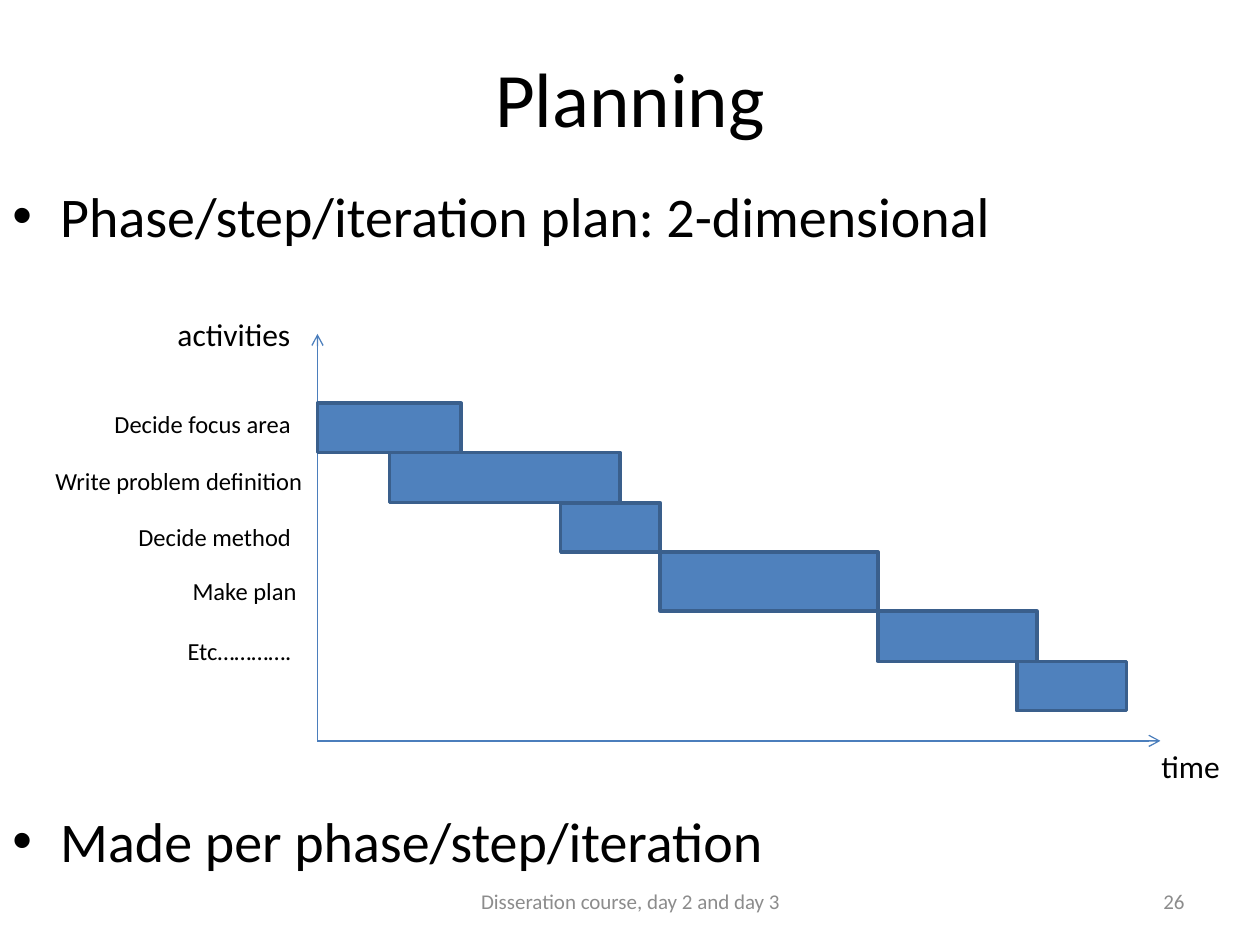
from collections import namedtuple
from dataclasses import dataclass

from lxml import etree
from pptx import Presentation
from pptx.dml.color import RGBColor
from pptx.enum.shapes import MSO_CONNECTOR, MSO_SHAPE
from pptx.enum.text import MSO_ANCHOR, PP_ALIGN
from pptx.oxml.ns import qn
from pptx.util import Inches, Pt

LEFT, CENTER, RIGHT = PP_ALIGN.LEFT, PP_ALIGN.CENTER, PP_ALIGN.RIGHT
TOP, MIDDLE = MSO_ANCHOR.TOP, MSO_ANCHOR.MIDDLE
RECTANGLE, STRAIGHT = MSO_SHAPE.RECTANGLE, MSO_CONNECTOR.STRAIGHT

Box = namedtuple("Box", "left top width height")


@dataclass(frozen=True)
class Theme:
    font: str = "Calibri"
    ink: RGBColor = RGBColor(0x00, 0x00, 0x00)
    muted: RGBColor = RGBColor(0x8C, 0x8C, 0x8C)
    axis: RGBColor = RGBColor(0x4B, 0x7E, 0xBC)
    bar: RGBColor = RGBColor(0x4F, 0x81, 0xBD)
    bar_edge: RGBColor = RGBColor(0x3A, 0x5F, 0x8C)
    title_size: int = 44
    body_size: int = 32
    axis_size: int = 18
    label_size: int = 14
    footer_size: int = 12


THEME = Theme()

POINTS = ["Phase/step/iteration plan: 2-dimensional", "Made per phase/step/iteration"]
POINT_GAP = 319

ACTIVITIES = [
    ("Decide focus area", 0.47, 0.75, 1.61),
    ("Write problem definition", 0, 1.2, 2.18),
    ("Decide method", 0.66, 1.64, 1.42),
    ("Make plan", 1.09, 2.07, 1.04),
    ("Etc………….", 1.05, 2.55, 1.03),
]
BARS = [
    (0, 1.14, 0.39),
    (0.57, 1.83, 0.4),
    (1.93, 0.79, 0.39),
    (2.72, 1.73, 0.47),
    (4.45, 1.26, 0.4),
    (5.55, 0.87, 0.39),
]


def add_text(slide, box, paragraphs, size, color=THEME.ink, align=LEFT, anchor=TOP, wrap=True):
    frame = slide.shapes.add_textbox(*map(Inches, box)).text_frame
    frame.word_wrap = wrap
    frame.vertical_anchor = anchor
    for index, text in enumerate(paragraphs):
        paragraph = frame.add_paragraph() if index else frame.paragraphs[0]
        paragraph.alignment = align
        run = paragraph.add_run()
        run.text = text
        run.font.name = THEME.font
        run.font.size = Pt(size)
        run.font.color.rgb = color
    return frame


def add_title(slide, box):
    add_text(slide, box, ["Planning"], THEME.title_size, align=CENTER, anchor=MIDDLE)


def add_points(slide, box):
    frame = add_text(slide, box, POINTS, THEME.body_size)
    for index, point in enumerate(frame.paragraphs):
        point.space_before = Pt(POINT_GAP if index else 0)
        properties = point._p.get_or_add_pPr()
        properties.set("marL", str(Inches(0.38)))
        properties.set("indent", str(Inches(-0.38)))
        etree.SubElement(properties, qn("a:buFont")).set("typeface", "Arial")
        etree.SubElement(properties, qn("a:buChar")).set("char", "•")


def add_axis(slide, start, end):
    axis = slide.shapes.add_connector(STRAIGHT, *map(Inches, start + end))
    axis.line.color.rgb = THEME.axis
    axis.line.width = Pt(0.75)
    etree.SubElement(axis.line._get_or_add_ln(), qn("a:tailEnd")).set("type", "arrow")
    etree.SubElement(axis._element.spPr, qn("a:effectLst"))


def add_bar(slide, box):
    bar = slide.shapes.add_shape(RECTANGLE, *map(Inches, box))
    bar.shadow.inherit = False
    bar.fill.solid()
    bar.fill.fore_color.rgb = THEME.bar
    bar.line.color.rgb = THEME.bar_edge
    bar.line.width = Pt(2)


def add_plan(slide, box):
    origin = (box.left + 2.18, box.top + 3.43)
    add_axis(slide, origin, (origin[0], box.top + 0.2))
    add_axis(slide, origin, (origin[0] + 6.69, origin[1]))

    activities_box = Box(box.left + 0.97, box.top, 1.11, 0.4)
    time_box = Box(box.left + 8.78, origin[1], 0.67, 0.4)
    for name, name_box in (("activities", activities_box), ("time", time_box)):
        add_text(slide, name_box, [name], THEME.axis_size, wrap=False)

    bar_top = box.top + 0.75
    for start, duration, height in BARS:
        add_bar(slide, Box(origin[0] + start, bar_top, duration, height))
        bar_top += height

    for activity, left, top, width in ACTIVITIES:
        label_box = Box(box.left + left, box.top + top, width, 0.34)
        add_text(slide, label_box, [activity], THEME.label_size, wrap=False)


def add_footer(slide, box):
    course_box = Box(box.left, box.top, 3.17, box.height)
    number_box = Box(box.left + box.width - 2.33, box.top, 2.33, box.height)
    for text, part, align in (
        ("26", number_box, RIGHT),
        ("Disseration course, day 2 and day 3", course_box, CENTER),
    ):
        add_text(slide, part, [text], THEME.footer_size, THEME.muted, align, MIDDLE)


def main():
    presentation = Presentation()
    presentation.slide_width = Inches(10)
    presentation.slide_height = Inches(7.5)
    slide = presentation.slides.add_slide(presentation.slide_layouts[6])
    add_title(slide, Box(0.5, 0.3, 9, 0.93))
    add_points(slide, Box(0, 1.39, 10, 6.11))
    add_plan(slide, Box(0.34, 2.45, 9.45, 3.83))
    add_footer(slide, Box(3.42, 6.95, 6.08, 0.4))
    presentation.save("out.pptx")


if __name__ == "__main__":
    main()
